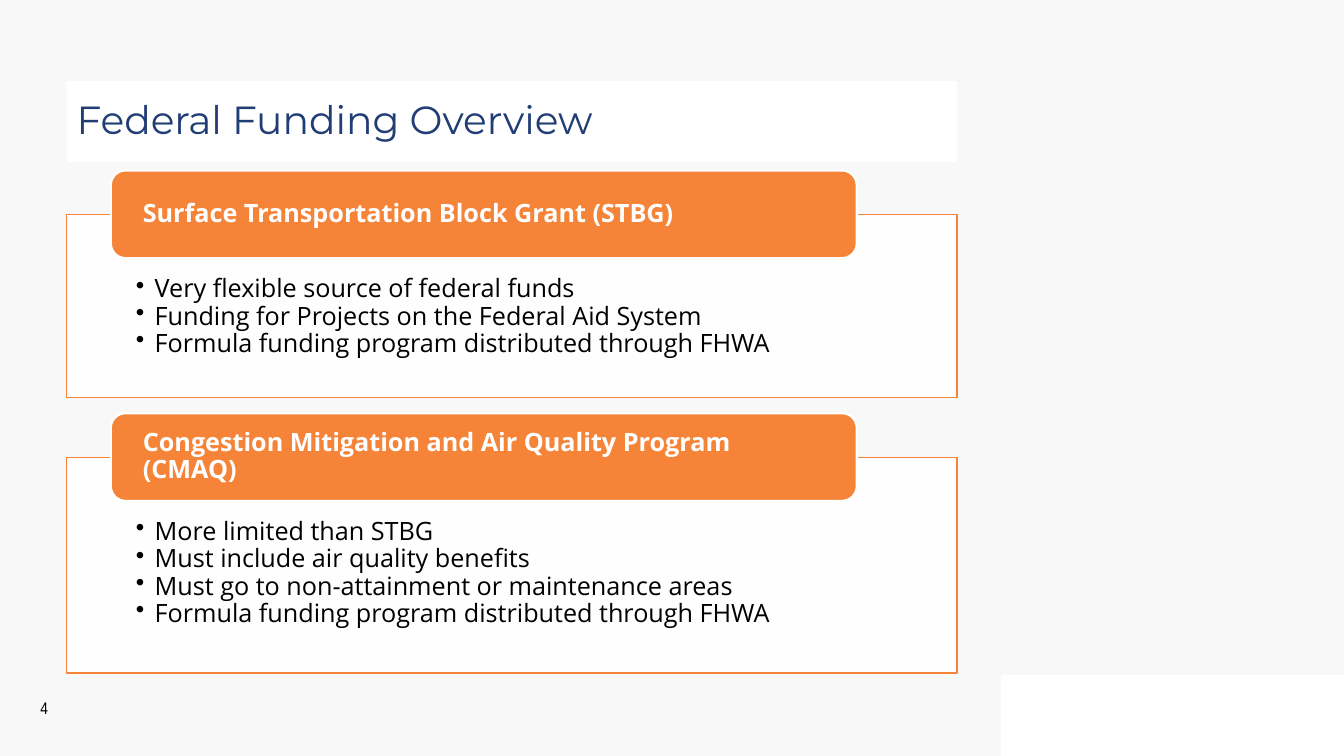
"""Build the federal funding overview slide."""
from lxml.etree import SubElement
from pptx import Presentation
from pptx.dml.color import RGBColor
from pptx.enum.shapes import MSO_SHAPE
from pptx.enum.text import MSO_ANCHOR, MSO_AUTO_SIZE, PP_ALIGN
from pptx.oxml.ns import qn
from pptx.util import Pt

BACKGROUND = RGBColor(0xF8, 0xF8, 0xF8)
WHITE = RGBColor(0xFF, 0xFF, 0xFF)
BLACK = RGBColor(0x00, 0x00, 0x00)
NAVY = RGBColor(0x21, 0x3D, 0x75)
ORANGE = RGBColor(0xF5, 0x84, 0x38)

PANEL_LEFT, PANEL_WIDTH = 47.5, 636
HEADER_LEFT, HEADER_WIDTH, HEADER_HEIGHT = 79.2, 532.8, 62.6
HEADER_OVERLAP = 31.6

PROGRAMS = [
    ("Surface Transportation Block Grant (STBG)", 153.4, 130.4, [
        "Very flexible source of federal funds",
        "Funding for Projects on the Federal Aid System",
        "Formula funding program distributed through FHWA",
    ]),
    ("Congestion Mitigation and Air Quality Program (CMAQ)", 326.8, 154, [
        "More limited than STBG",
        "Must include air quality benefits",
        "Must go to non-attainment or maintenance areas",
        "Formula funding program distributed through FHWA",
    ]),
]


class FundingSlide:
    """Hold the slide and its style, and add each kind of element."""

    def __init__(self, presentation):
        """Add a title-only slide with a light background."""
        self.body_font = "Open Sans"
        self.title_font = "Montserrat"
        self.number_font = "Arial Narrow"
        self.slide = presentation.slides.add_slide(presentation.slide_layouts[5])
        self.slide.background.fill.solid()
        self.slide.background.fill.fore_color.rgb = BACKGROUND

    def add_box(self, kind, left, top, width, height, fill, line=None, line_width=1):
        """Add a filled preset shape, outlined when a line colour is given."""
        shape = self.slide.shapes.add_shape(kind, Pt(left), Pt(top), Pt(width), Pt(height))
        shape.shadow.inherit = False
        shape.fill.solid()
        shape.fill.fore_color.rgb = fill
        if line is None:
            shape.line.fill.background()
        else:
            shape.line.color.rgb = line
            shape.line.width = Pt(line_width)
        return shape

    def set_text(self, shape, lines, font, size, color, bold=False, align=PP_ALIGN.LEFT,
                 anchor=MSO_ANCHOR.MIDDLE, insets=(7.2, 3.6), bulleted=False):
        """Fill a shape with formatted paragraphs."""
        frame = shape.text_frame
        frame.text = "\n".join(lines)
        frame.word_wrap = True
        frame.auto_size = MSO_AUTO_SIZE.NONE
        frame.vertical_anchor = anchor
        frame.margin_left = frame.margin_right = Pt(insets[0])
        frame.margin_top = Pt(insets[1])
        for paragraph in frame.paragraphs:
            if bulleted:
                self.add_bullet(paragraph)
            paragraph.alignment = align
            paragraph.line_spacing = 0.9
            for run in paragraph.runs:
                run.font.name = font
                run.font.size = Pt(size)
                run.font.bold = bold
                run.font.color.rgb = color

    def add_bullet(self, paragraph):
        """Give a paragraph a round bullet with a hanging indent."""
        properties = paragraph._p.get_or_add_pPr()
        properties.set("marL", str(Pt(13.5)))
        properties.set("indent", str(-Pt(13.5)))
        SubElement(properties, qn("a:buChar"), char="•")

    def add_title(self, text):
        """Place and format the title placeholder."""
        title = self.slide.shapes.title
        title.left, title.top = Pt(PANEL_LEFT), Pt(58)
        title.width, title.height = Pt(PANEL_WIDTH), Pt(57.6)
        title.fill.solid()
        title.fill.fore_color.rgb = WHITE
        self.set_text(title, [text], self.title_font, 28, NAVY)

    def add_number(self, text):
        """Add the slide number."""
        box = self.slide.shapes.add_textbox(Pt(15.8), Pt(491.8), Pt(31.7), Pt(28.8))
        self.set_text(box, [text], self.number_font, 12, BLACK, align=PP_ALIGN.CENTER)

    def add_program(self, name, top, height, points):
        """Add an outlined panel of points under an overlapping header."""
        panel = self.add_box(MSO_SHAPE.RECTANGLE, PANEL_LEFT, top, PANEL_WIDTH, height,
                             WHITE, ORANGE)
        color = panel._element.spPr.find(qn("a:solidFill")).find(qn("a:srgbClr"))
        SubElement(color, qn("a:alpha"), val="90000")
        self.set_text(panel, points, self.body_font, 18, BLACK, anchor=MSO_ANCHOR.TOP,
                      insets=(49.5, 43.8), bulleted=True)
        header = self.add_box(MSO_SHAPE.ROUNDED_RECTANGLE, HEADER_LEFT, top - HEADER_OVERLAP,
                              HEADER_WIDTH, HEADER_HEIGHT, ORANGE, WHITE, 1.5)
        self.set_text(header, [name], self.body_font, 18, WHITE, bold=True, insets=(19.8, 3.6))


def main():
    """Build and save the presentation."""
    presentation = Presentation()
    presentation.slide_width, presentation.slide_height = Pt(960), Pt(540)
    slide = FundingSlide(presentation)
    slide.add_box(MSO_SHAPE.FLOWCHART_PROCESS, 715, 482, 245, 58, WHITE)
    slide.add_number("4")
    slide.add_title("Federal Funding Overview")
    for program in PROGRAMS:
        slide.add_program(*program)
    presentation.save("out.pptx")


if __name__ == "__main__":
    main()
